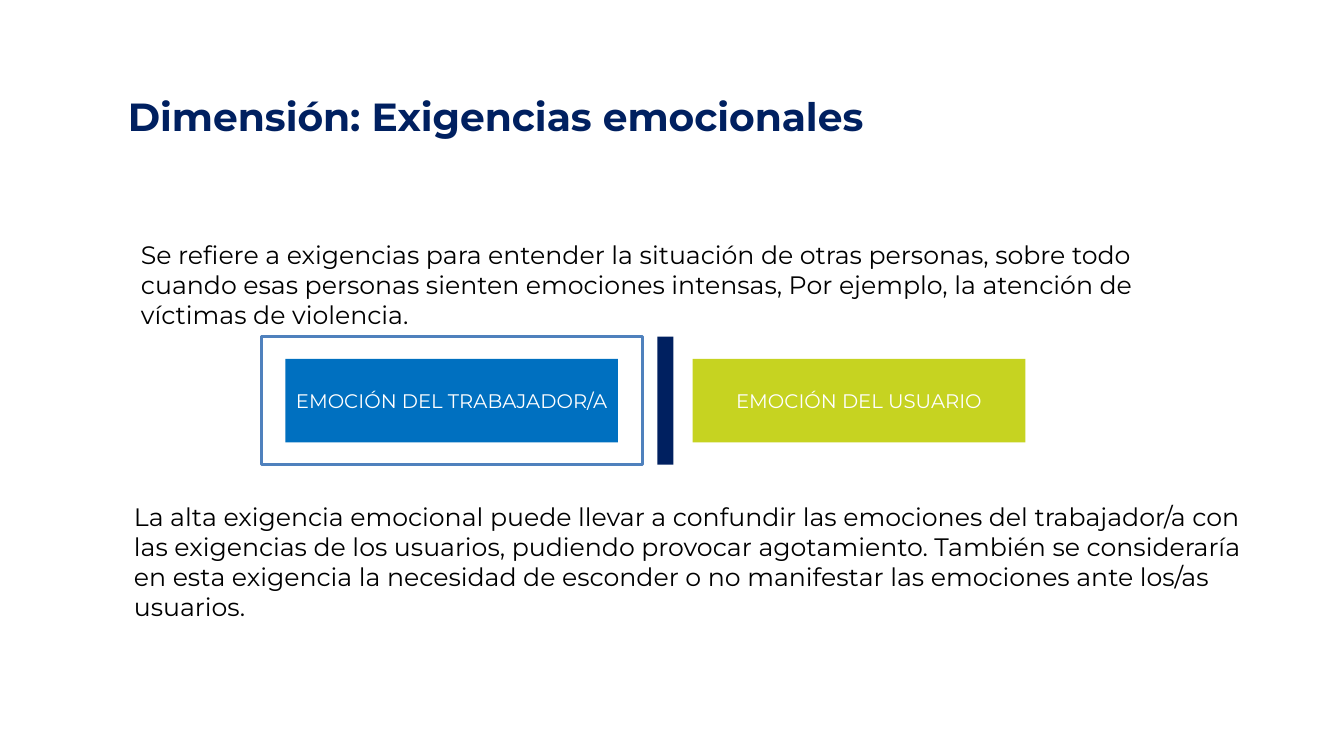
from pptx import Presentation
from pptx.dml.color import RGBColor
from pptx.enum.shapes import MSO_SHAPE
from pptx.enum.text import MSO_ANCHOR, PP_ALIGN
from pptx.util import Inches, Pt

RECTANGLE = MSO_SHAPE.RECTANGLE
MIDDLE, TOP = MSO_ANCHOR.MIDDLE, MSO_ANCHOR.TOP
CENTER, LEFT = PP_ALIGN.CENTER, PP_ALIGN.LEFT

NAVY = RGBColor(0x00, 0x20, 0x60)
BLUE = RGBColor(0x00, 0x70, 0xC0)
FRAME_BLUE = RGBColor(0x4F, 0x81, 0xBD)
LIME = RGBColor(0xC6, 0xD3, 0x21)
BLACK = RGBColor(0x00, 0x00, 0x00)
WHITE = RGBColor(0xFF, 0xFF, 0xFF)
FONT = "Montserrat"

TITLE = "Dimensión: Exigencias emocionales"
DEFINITION = (
    "Se refiere a exigencias para entender la situación de otras personas, "
    "sobre todo cuando esas personas sienten emociones intensas, "
    "Por ejemplo, la atención de víctimas de violencia."
)
CONSEQUENCE = (
    "La alta exigencia emocional puede llevar a confundir las emociones del "
    "trabajador/a con las exigencias de los usuarios, pudiendo provocar "
    "agotamiento. También se consideraría en esta exigencia la necesidad de "
    "esconder o no manifestar las emociones ante los/as usuarios."
)
EMOTIONS = [("EMOCIÓN DEL TRABAJADOR/A", BLUE), ("EMOCIÓN DEL USUARIO", LIME)]
PARAGRAPHS = [
    (DEFINITION, (1.3, 2.32, 10.67, 1.01)),
    (CONSEQUENCE, (1.23, 4.92, 11.45, 1.31)),
]

EMOTION_LEFT, EMOTION_STEP = 2.83, 4.04
EMOTION_WIDTH, EMOTION_HEIGHT = 3.3, 0.83
BAND_TOP, BAND_HEIGHT = 3.34, 1.27
FRAME_MARGIN = 0.24
BARRIER_LEFT, BARRIER_WIDTH = 6.52, 0.16

prs = Presentation()
prs.slide_width, prs.slide_height = Inches(13.33), Inches(7.5)
slide = prs.slides.add_slide(prs.slide_layouts[6])


def write(shape, text, size, color, bold=False, align=LEFT, anchor=TOP):
    frame = shape.text_frame
    frame.word_wrap = True
    frame.vertical_anchor = anchor
    frame.text = text
    paragraph = frame.paragraphs[0]
    paragraph.alignment = align
    font = paragraph.runs[0].font
    font.name, font.size, font.bold = FONT, Pt(size), bold
    font.color.rgb = color


def add_text(text, box, size, color, **style):
    write(slide.shapes.add_textbox(*map(Inches, box)), text, size, color, **style)


def add_rectangle(box, fill=None, line=None):
    shape = slide.shapes.add_shape(RECTANGLE, *map(Inches, box))
    shape.shadow.inherit = False
    if fill is None:
        shape.fill.background()
    else:
        shape.fill.solid()
        shape.fill.fore_color.rgb = fill
    if line is None:
        shape.line.fill.background()
    else:
        shape.line.color.rgb = line
        shape.line.width = Pt(2)
    return shape


for text, box in PARAGRAPHS:
    add_text(text, box, 18, BLACK)

emotion_top = BAND_TOP + (BAND_HEIGHT - EMOTION_HEIGHT) / 2
for column, (label, color) in enumerate(EMOTIONS):
    left = EMOTION_LEFT + column * EMOTION_STEP
    emotion = add_rectangle((left, emotion_top, EMOTION_WIDTH, EMOTION_HEIGHT), color)
    emotion.text_frame.margin_left = emotion.text_frame.margin_right = Inches(0.05)
    write(emotion, label, 14, WHITE, align=CENTER, anchor=MIDDLE)

frame_width = EMOTION_WIDTH + 2 * FRAME_MARGIN
add_rectangle((EMOTION_LEFT - FRAME_MARGIN, BAND_TOP, frame_width, BAND_HEIGHT), line=FRAME_BLUE)
add_rectangle((BARRIER_LEFT, BAND_TOP, BARRIER_WIDTH, BAND_HEIGHT), NAVY)
add_text(TITLE, (1.17, 0.52, 9, 1.25), 28, NAVY, bold=True, anchor=MIDDLE)

prs.save("out.pptx")
